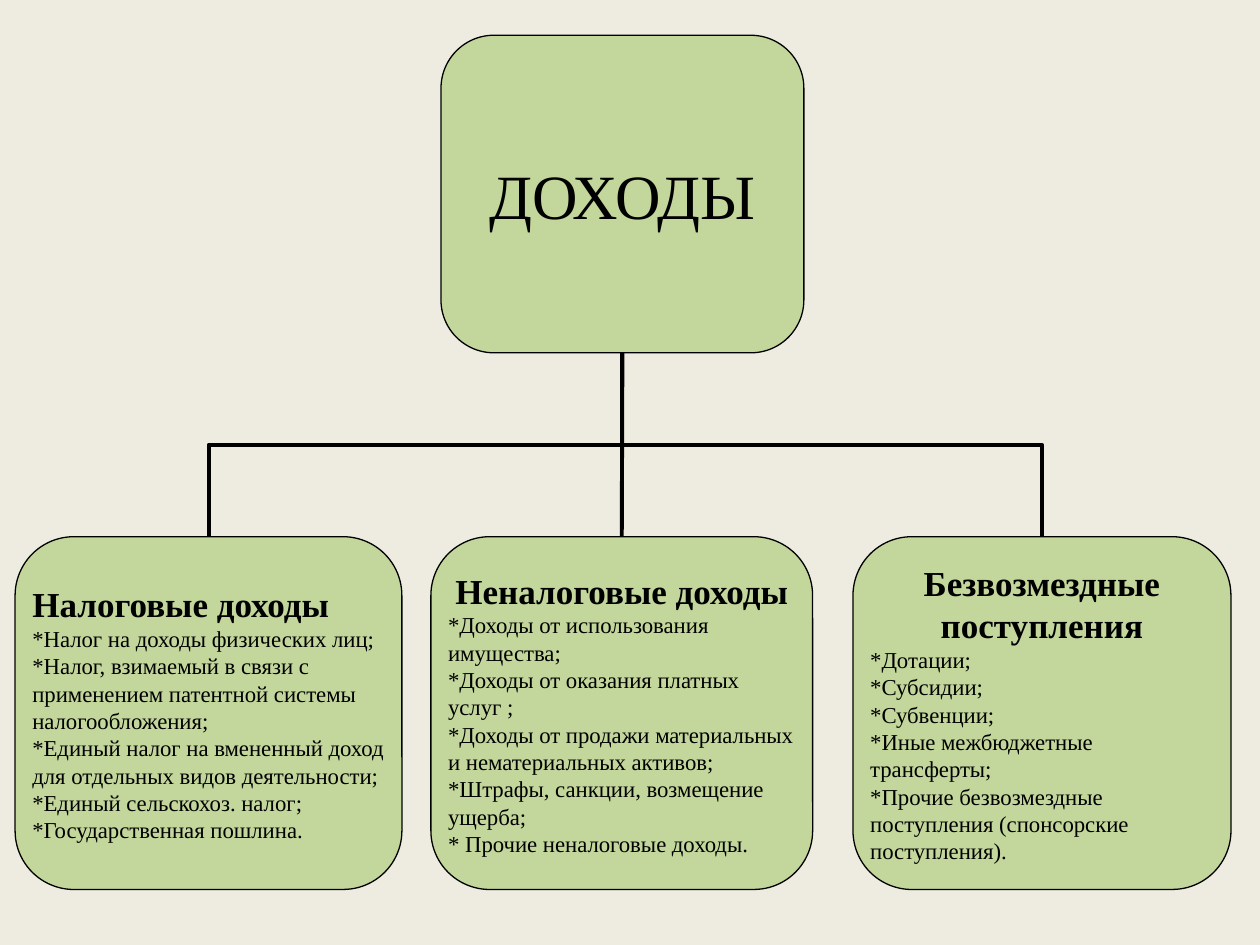
from dataclasses import dataclass

from lxml import etree
from pptx import Presentation
from pptx import util as u
from pptx.dml import color
from pptx.enum import shapes, text
from pptx.oxml import ns


@dataclass(frozen=True)
class Theme:
    font: str = "Times New Roman"
    background: str = "EEECE1"
    fill: str = "C3D69B"
    ink: str = "000000"
    root_size: float = 36
    heading_size: float = 20
    item_size: float = 13
    outline: float = 0.75
    branch: float = 2.25


class Chart:
    def __init__(self, slide, theme):
        self.slide = slide
        self.theme = theme
        slide.background.fill.solid()
        slide.background.fill.fore_color.rgb = self.rgb(theme.background)

    def rgb(self, value):
        return color.RGBColor.from_string(value)

    def box(self, left, top, width, height):
        box = self.slide.shapes.add_shape(
            shapes.MSO_SHAPE.ROUNDED_RECTANGLE,
            u.Inches(left), u.Inches(top), u.Inches(width), u.Inches(height))
        box.shadow.inherit = False
        box.fill.solid()
        box.fill.fore_color.rgb = self.rgb(self.theme.fill)
        box.line.color.rgb = self.rgb(self.theme.ink)
        box.line.width = u.Pt(self.theme.outline)
        frame = box.text_frame
        frame.word_wrap = True
        frame.vertical_anchor = text.MSO_ANCHOR.MIDDLE
        frame.margin_left = frame.margin_right = 0
        frame.margin_top = frame.margin_bottom = 0
        return box

    def format(self, para, size, align, bold=False):
        para.alignment = align
        for span in para.runs:
            span.font.name = self.theme.font
            span.font.size = u.Pt(size)
            span.font.bold = bold
            span.font.color.rgb = self.rgb(self.theme.ink)

    def root(self, title, *place):
        box = self.box(*place)
        box.text_frame.text = title
        self.format(box.text_frame.paragraphs[0], self.theme.root_size,
                    text.PP_ALIGN.CENTER)
        return box

    def group(self, heading, items, align, *place):
        box = self.box(*place)
        box.text_frame.text = "\n".join([heading, *items])
        first, *rest = box.text_frame.paragraphs
        self.format(first, self.theme.heading_size, align, bold=True)
        for para in rest:
            self.format(para, self.theme.item_size, text.PP_ALIGN.LEFT)
        return box

    def connector(self, kind, *ends):
        line = self.slide.shapes.add_connector(kind, *ends)
        line.line.color.rgb = self.rgb(self.theme.ink)
        line.line.width = u.Pt(self.theme.branch)
        etree.SubElement(line.element.spPr, ns.qn("a:effectLst"))
        return line

    def trunk(self, parent, child):
        line = self.connector(shapes.MSO_CONNECTOR.STRAIGHT, 0, 0, 0, 0)
        line.begin_connect(parent, 2)
        line.end_connect(child, 0)

    def elbow(self, parent, child):
        start_x = parent.left + parent.width // 2
        start_y = parent.top + parent.height
        end_x = child.left + child.width // 2
        middle_x = (start_x + end_x) // 2
        middle_y = (start_y + child.top) // 2
        half_drop = (child.top - start_y) // 2
        half_span = abs(end_x - start_x) // 2
        goes_right = end_x > start_x
        reach = -half_drop if goes_right else half_drop
        line = self.connector(
            shapes.MSO_CONNECTOR.ELBOW,
            middle_x - reach, middle_y - half_span,
            middle_x + reach, middle_y + half_span)
        degrees = 270 if goes_right else 90
        line.element.spPr.find(ns.qn("a:xfrm")).set("rot", str(degrees * 60000))


GROUP_TOP, GROUP_HEIGHT = 4.26, 2.8
GROUPS = [
    ("Налоговые доходы", text.PP_ALIGN.LEFT, 0.12, 3.07, [
        "*Налог на доходы физических лиц;",
        "*Налог, взимаемый в связи с применением патентной системы налогообложения;",
        "*Единый налог на вмененный доход для отдельных видов деятельности;",
        "*Единый сельскохоз. налог;",
        "*Государственная пошлина.",
    ]),
    ("Неналоговые доходы", text.PP_ALIGN.CENTER, 3.42, 3.03, [
        "*Доходы от использования имущества;",
        "*Доходы от оказания платных услуг ;",
        "*Доходы от продажи материальных и нематериальных активов;",
        "*Штрафы, санкции, возмещение ущерба;",
        "* Прочие неналоговые доходы.",
    ]),
    ("Безвозмездные поступления", text.PP_ALIGN.CENTER, 6.77, 3, [
        "*Дотации;",
        "*Субсидии;",
        "*Субвенции;",
        "*Иные межбюджетные трансферты;",
        "*Прочие безвозмездные поступления (спонсорские поступления).",
    ]),
]


def main():
    deck = Presentation()
    deck.slide_width, deck.slide_height = u.Inches(10), u.Inches(7.5)
    page = deck.slides.add_slide(deck.slide_layouts[6])
    chart = Chart(page, Theme())

    income = chart.root("ДОХОДЫ", 3.5, 0.28, 2.88, 2.52)
    taxes, fees, grants = [
        chart.group(heading, items, align, left, GROUP_TOP, width, GROUP_HEIGHT)
        for heading, align, left, width, items in GROUPS]
    chart.elbow(income, taxes)
    chart.trunk(income, fees)
    chart.elbow(income, grants)

    deck.save("out.pptx")


if __name__ == "__main__":
    main()
